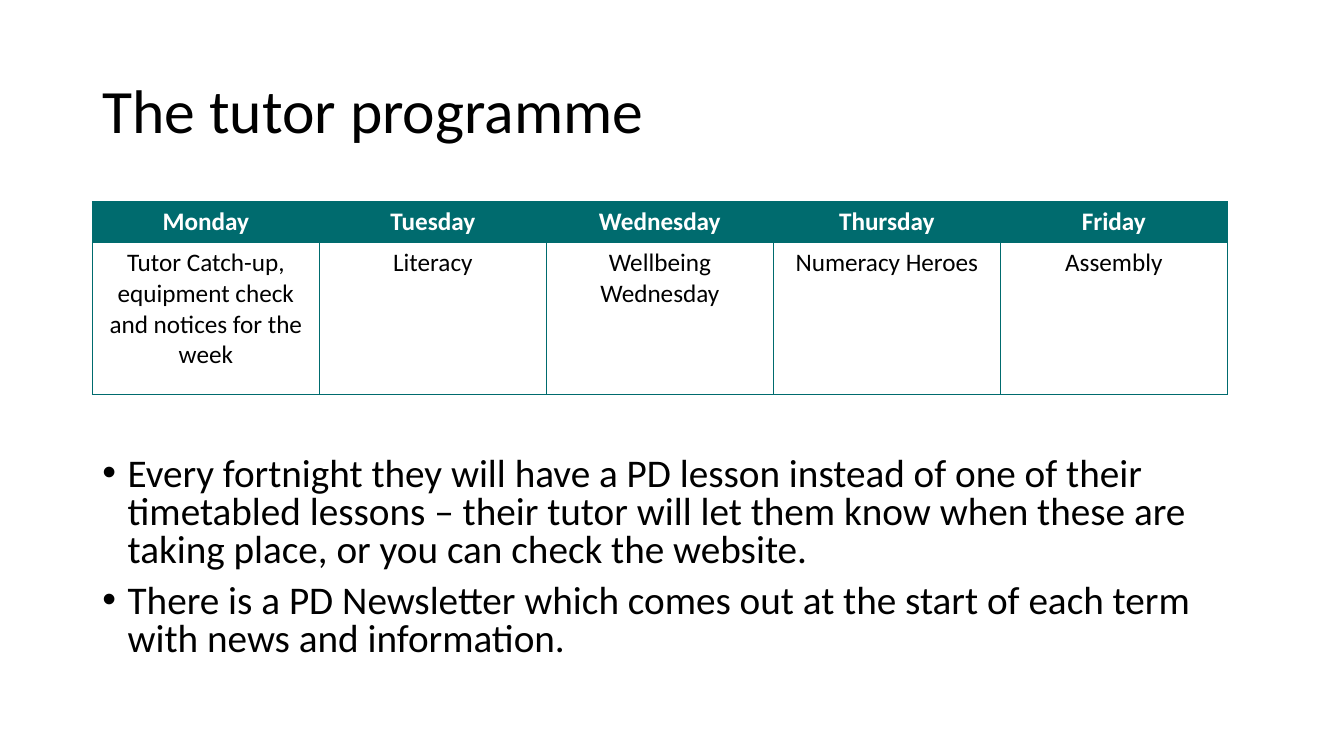
from pptx import Presentation
from pptx.dml.color import RGBColor
from pptx.enum.text import MSO_ANCHOR, MSO_AUTO_SIZE, PP_ALIGN
from pptx.oxml.ns import qn
from pptx.util import Pt
from lxml import etree

LEFT, CENTER = PP_ALIGN.LEFT, PP_ALIGN.CENTER
TOP, MIDDLE = MSO_ANCHOR.TOP, MSO_ANCHOR.MIDDLE
NO_FIT = MSO_AUTO_SIZE.NONE

COLORS = {"teal": "006B6E", "white": "FFFFFF", "black": "000000"}
TUTOR_WEEK = [
    ("Monday", "Tutor Catch-up, equipment check and notices for the week"),
    ("Tuesday", "Literacy"),
    ("Wednesday", "Wellbeing Wednesday"),
    ("Thursday", "Numeracy Heroes"),
    ("Friday", "Assembly"),
]
PD_POINTS = [
    "Every fortnight they will have a PD lesson instead of one of their "
    "timetabled lessons – their tutor will let them know when these are "
    "taking place, or you can check the website.",
    "There is a PD Newsletter which comes out at the start of each "
    "term with news and information.",
]


class SlideBuilder:
    font = "Calibri"

    def __init__(self, prs):
        self.s = prs.slides.add_slide(prs.slide_layouts[1])

    def style(self, p, size, color, align, bold=False):
        p.alignment = align
        for r in p.runs:
            r.font.name = self.font
            r.font.size = Pt(size)
            r.font.bold = bold
            r.font.color.rgb = RGBColor.from_string(COLORS[color])

    def place(self, sp, box, anchor):
        sp.left, sp.top, sp.width, sp.height = map(Pt, box)
        tf = sp.text_frame
        tf.auto_size = NO_FIT
        tf.word_wrap = True
        tf.vertical_anchor = anchor
        return tf

    def title(self, text, box, size):
        tf = self.place(self.s.shapes.title, box, MIDDLE)
        tf.text = text
        p = tf.paragraphs[0]
        p.line_spacing = 0.9
        self.style(p, size, "black", LEFT)

    def bullets(self, items, box, size, indent):
        tf = self.place(self.s.placeholders[1], box, TOP)
        tf.text = "\n".join(items)
        for i, p in enumerate(tf.paragraphs):
            pPr = p._p.get_or_add_pPr()
            pPr.set("marL", str(Pt(indent)))
            pPr.set("indent", str(-Pt(indent)))
            etree.SubElement(pPr, qn("a:buFont"), typeface="Arial")
            etree.SubElement(pPr, qn("a:buChar"), char="•")
            p.line_spacing = 0.8
            p.space_before = Pt(10 if i else 0)
            self.style(p, size, "black", LEFT)

    def borders(self, cell, color, width):
        tcPr = cell._tc.get_or_add_tcPr()
        for side in ("lnL", "lnR", "lnT", "lnB"):
            ln = etree.SubElement(tcPr, qn(f"a:{side}"), w=str(Pt(width)))
            fill = etree.SubElement(ln, qn("a:solidFill"))
            etree.SubElement(fill, qn("a:srgbClr"), val=COLORS[color])

    def table(self, rows, left, top, col_width, heights, size):
        cols = len(rows[0])
        frame = self.s.shapes.add_table(
            len(rows), cols, Pt(left), Pt(top),
            Pt(col_width * cols), Pt(sum(heights)))
        table = frame.table
        for col in table.columns:
            col.width = Pt(col_width)
        for i, (row, height) in enumerate(zip(rows, heights)):
            table.rows[i].height = Pt(height)
            fill, color = ("white", "black") if i else ("teal", "white")
            for j, text in enumerate(row):
                cell = table.cell(i, j)
                cell.text = text
                self.borders(cell, "teal", 1)
                cell.fill.solid()
                cell.fill.fore_color.rgb = RGBColor.from_string(COLORS[fill])
                self.style(cell.text_frame.paragraphs[0], size, color,
                           CENTER, bold=i == 0)


def main():
    prs = Presentation()
    prs.slide_width, prs.slide_height = Pt(960), Pt(540)
    slide = SlideBuilder(prs)
    slide.title("The tutor programme", (66, 28.75, 828, 104.4), 44)
    slide.table(list(zip(*TUTOR_WEEK)), 66, 144, 162.15, (29.2, 108.6), 18)
    slide.bullets(PD_POINTS, (66, 323.3, 810.75, 160.5), 28, 18)
    prs.save("out.pptx")


if __name__ == "__main__":
    main()
